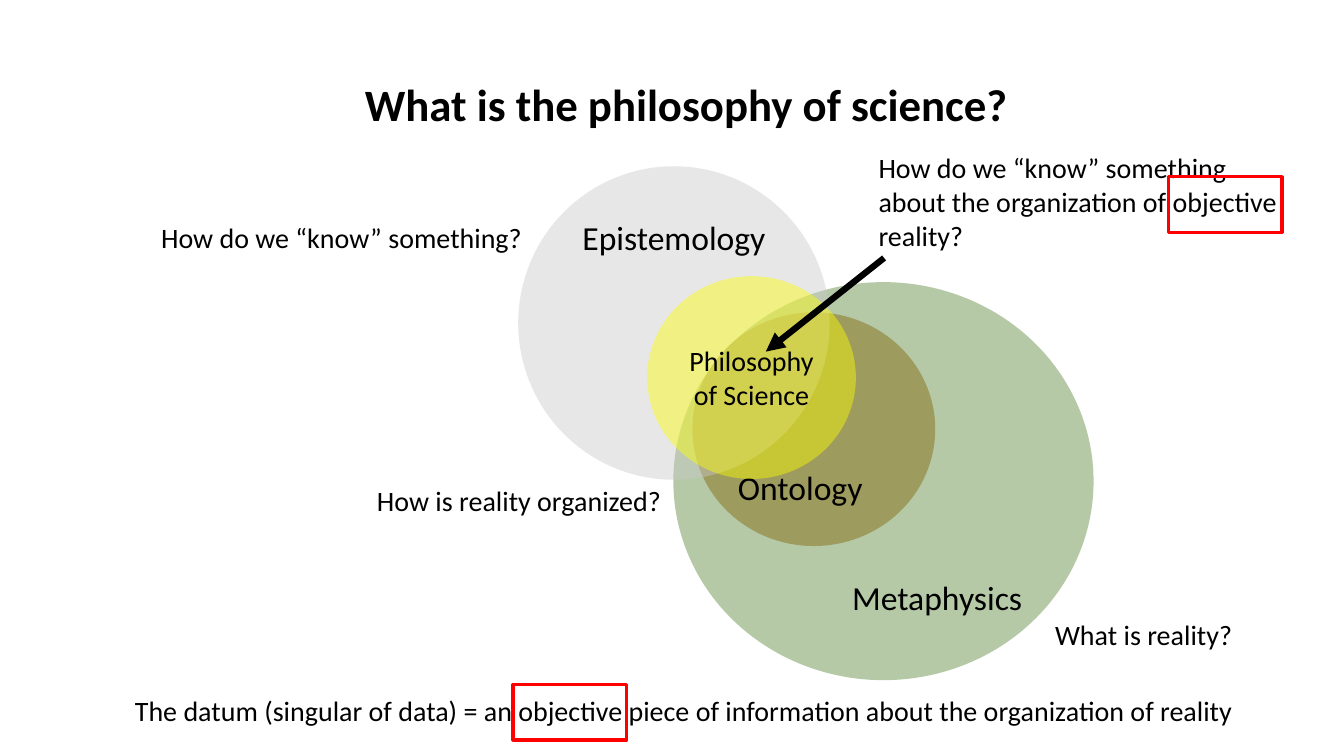
from dataclasses import dataclass

from lxml.etree import SubElement
from pptx import Presentation
from pptx.dml.color import RGBColor
from pptx.enum.shapes import MSO_CONNECTOR, MSO_SHAPE
from pptx.enum.text import MSO_ANCHOR, MSO_AUTO_SIZE, PP_ALIGN
from pptx.oxml.ns import qn
from pptx.util import Cm, Pt


@dataclass(frozen=True)
class Theme:
    font: str = "Calibri"
    ink: str = "000000"
    mark: str = "FF0000"
    green: str = "548235"
    brown: str = "806000"
    grey: str = "C9C9C9"
    yellow: str = "FFFF00"
    alpha: int = 43
    title: int = 32
    field: int = 24
    body: int = 20
    arrow: float = 4.5
    frame: float = 2.25


THEME = Theme()

# text, box (left, top, width, height in cm), fill, type size, anchor, alignment
FIELDS = [
    ("Metaphysics", (16.97, 7.11, 10.59, 10.03), THEME.green, THEME.field,
     MSO_ANCHOR.BOTTOM, PP_ALIGN.RIGHT),
    ("Ontology", (17.45, 7.87, 6.12, 5.89), THEME.brown, THEME.field,
     MSO_ANCHOR.BOTTOM, PP_ALIGN.LEFT),
    ("Epistemology", (13.06, 4.19, 7.85, 7.9), THEME.grey, THEME.field,
     MSO_ANCHOR.TOP, PP_ALIGN.CENTER),
    ("Philosophy of Science", (16.31, 6.96, 5.26, 5.11), THEME.yellow, THEME.body,
     MSO_ANCHOR.MIDDLE, PP_ALIGN.CENTER),
]

# text, box, wrap
NOTES = [
    ("What is reality?", (26.34, 15.44, 5.03, 1.12), False),
    ("How do we “know” something?", (3.81, 5.44, 9.68, 1.12), False),
    ("How is reality organized?", (9.25, 12.07, 7.72, 1.12), False),
    ("The datum (singular of data) = an objective piece of information "
     "about the organization of reality", (3.15, 17.35, 28.45, 1.12), False),
    ("How do we “know” something about the organization of objective reality?",
     (21.89, 3.68, 10.69, 2.82), True),
]

FRAMES = [(12.93, 17.25, 2.87, 1.4), (29.44, 4.45, 2.87, 1.4)]


def cms(nums):
    return [Cm(num) for num in nums]


def rgb(code):
    return RGBColor.from_string(code)


def style(item, values):
    """Set each named attribute of item."""
    for name, value in values.items():
        setattr(item, name, value)


def write(shape, text, size, align=PP_ALIGN.LEFT, bold=False, **frame):
    """Fill a shape with one formatted paragraph; frame holds text frame settings."""
    body = shape.text_frame
    style(body, frame)
    body.text = text
    para = body.paragraphs[0]
    para.alignment = align
    style(para.font, {"name": THEME.font, "size": Pt(size), "bold": bold})
    para.font.color.rgb = rgb(THEME.ink)


def add_title(slide, text, box):
    title = slide.shapes.title
    style(title, dict(zip(("left", "top", "width", "height"), cms(box))))
    write(title, text, THEME.title, bold=True, word_wrap=False,
          auto_size=MSO_AUTO_SIZE.SHAPE_TO_FIT_TEXT, vertical_anchor=MSO_ANCHOR.TOP)


def add_field(slide, text, box, fill, size, anchor, align):
    """Add a see-through ellipse that names a field."""
    oval = slide.shapes.add_shape(MSO_SHAPE.OVAL, *cms(box))
    oval.shadow.inherit = False
    oval.line.fill.background()
    oval.fill.solid()
    oval.fill.fore_color.rgb = rgb(fill)
    color = oval.fill._xPr.find(f".//{qn('a:srgbClr')}")
    SubElement(color, qn("a:alpha"), val=str(THEME.alpha * 1000))
    write(oval, text, size, align, word_wrap=True, vertical_anchor=anchor)


def add_note(slide, text, box, wrap):
    note = slide.shapes.add_textbox(*cms(box))
    write(note, text, THEME.body, word_wrap=wrap,
          auto_size=MSO_AUTO_SIZE.SHAPE_TO_FIT_TEXT)


def add_arrow(slide, start, end):
    arrow = slide.shapes.add_connector(
        MSO_CONNECTOR.STRAIGHT, *cms(start), *cms(end))
    arrow.line.color.rgb = rgb(THEME.ink)
    arrow.line.width = Pt(THEME.arrow)
    SubElement(arrow.line._get_or_add_ln(), qn("a:tailEnd"), type="triangle")
    SubElement(arrow._element.spPr, qn("a:effectLst"))


def add_frame(slide, box):
    frame = slide.shapes.add_shape(MSO_SHAPE.RECTANGLE, *cms(box))
    frame.shadow.inherit = False
    frame.fill.background()
    frame.line.color.rgb = rgb(THEME.mark)
    frame.line.width = Pt(THEME.frame)


def main():
    deck = Presentation()
    style(deck, {"slide_width": Cm(33.87), "slide_height": Cm(19.05)})
    slide = deck.slides.add_slide(deck.slide_layouts.get_by_name("Title Only"))
    add_title(slide, "What is the philosophy of science?", (8.94, 1.8, 16.87, 1.63))
    for field in FIELDS:
        add_field(slide, *field)
    for note in NOTES:
        add_note(slide, *note)
    add_arrow(slide, (22.28, 6.5), (19.3, 8.86))
    for box in FRAMES:
        add_frame(slide, box)
    deck.save("out.pptx")


if __name__ == "__main__":
    main()
